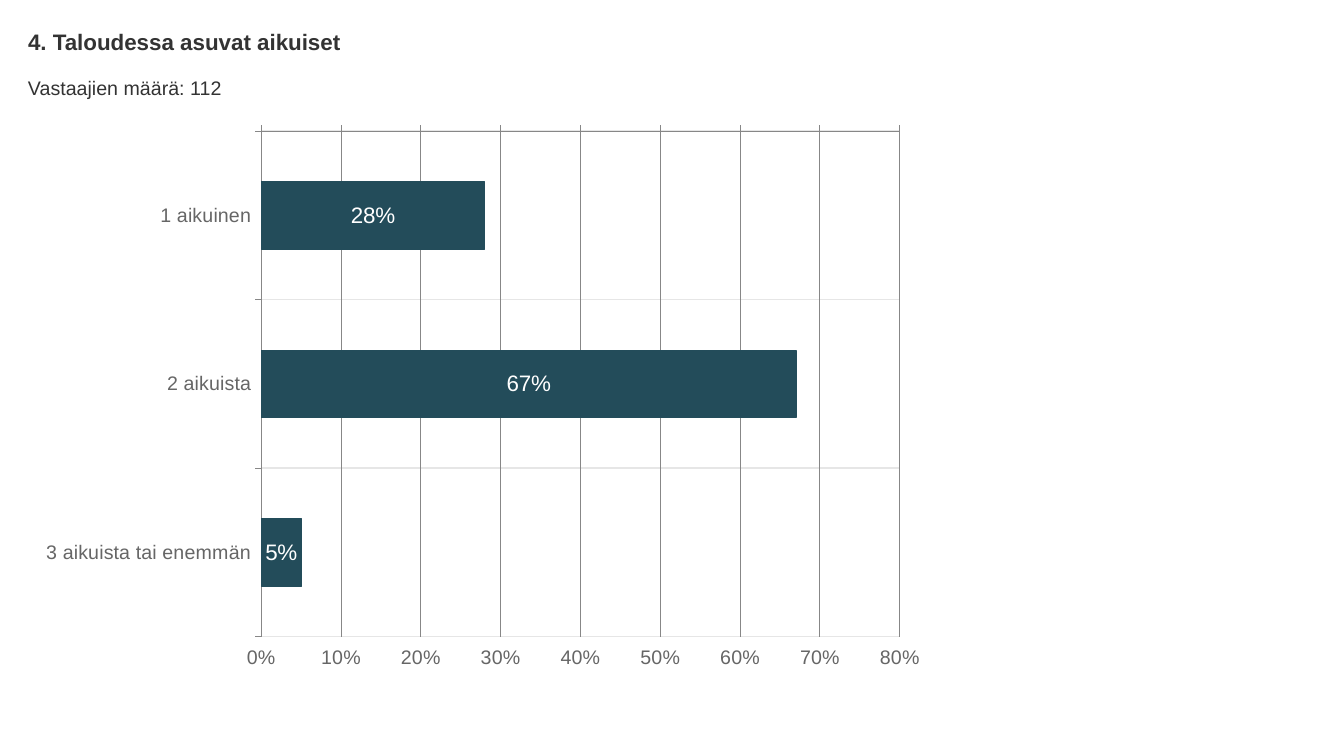
import pptx
import pptx.chart.data
import pptx.dml.color
import pptx.enum.chart
import pptx.enum.text
import pptx.util

Pt = pptx.util.Pt
RGBColor = pptx.dml.color.RGBColor

WHITE = RGBColor(0xFF, 0xFF, 0xFF)
BLACK = RGBColor(0x00, 0x00, 0x00)
HEADING_GREY = RGBColor(0x33, 0x33, 0x33)
LABEL_GREY = RGBColor(0x66, 0x66, 0x66)
AXIS_GREY = RGBColor(0x87, 0x87, 0x87)
DIVIDER_GREY = RGBColor(0xE6, 0xE6, 0xE6)
BAR_TEAL = RGBColor(0x23, 0x4C, 0x5A)

LEFT = Pt(20)
TEXT_WIDTH = Pt(920)


def style_font(font, size, color, name="Arial", bold=False):
    font.name = name
    font.size = Pt(size)
    font.bold = bold
    font.color.rgb = color


def style_line(line, color, width):
    line.color.rgb = color
    line.width = Pt(width)


presentation = pptx.Presentation()
presentation.slide_width = Pt(960)
presentation.slide_height = Pt(540)
slide = presentation.slides.add_slide(presentation.slide_layouts[5])

# Heading and number of respondents
question = slide.shapes.title
respondents = slide.shapes.add_textbox(LEFT, Pt(54), TEXT_WIDTH, Pt(16.5))
question.left, question.top = LEFT, Pt(20)
question.width, question.height = TEXT_WIDTH, Pt(19.5)

for box, text, size, bold in (
    (question, "4. Taloudessa asuvat aikuiset", 16, True),
    (respondents, "Vastaajien määrä: 112", 14, False),
):
    frame = box.text_frame
    frame.margin_left = frame.margin_top = 0
    frame.margin_right = frame.margin_bottom = 0
    frame.word_wrap = True
    frame.auto_size = pptx.enum.text.MSO_AUTO_SIZE.SHAPE_TO_FIT_TEXT
    frame.vertical_anchor = pptx.enum.text.MSO_ANCHOR.TOP
    paragraph = frame.paragraphs[0]
    paragraph.alignment = pptx.enum.text.PP_ALIGN.LEFT
    run = paragraph.add_run()
    run.text = text
    style_font(run.font, size, HEADING_GREY, bold=bold)

# Share of households by number of adults
shares = pptx.chart.data.CategoryChartData(number_format="0%")
shares.categories = ["1 aikuinen", "2 aikuista", "3 aikuista tai enemmän"]
shares.add_series("Series 1", (0.28, 0.67, 0.05))
chart = slide.shapes.add_chart(
    pptx.enum.chart.XL_CHART_TYPE.BAR_CLUSTERED,
    LEFT, Pt(85.7), Pt(650), Pt(400), shares,
).chart
chart.has_title = False
chart.has_legend = False
style_font(chart.font, 14, BLACK, name="Calibri")

plot = chart.plots[0]
plot.gap_width = 150
plot.vary_by_categories = False
bars = plot.series[0]
bars.invert_if_negative = False
bars.format.fill.solid()
bars.format.fill.fore_color.rgb = BAR_TEAL
style_line(bars.format.line, BAR_TEAL, 0.75)

plot.has_data_labels = True
percentages = plot.data_labels
percentages.show_value = True
percentages.number_format = "0%"
percentages.number_format_is_linked = False
percentages.position = pptx.enum.chart.XL_LABEL_POSITION.CENTER
style_font(percentages.font, 16, WHITE)

adults_axis = chart.category_axis
share_axis = chart.value_axis
for axis, grid_color, grid_width in (
    (adults_axis, DIVIDER_GREY, 1),
    (share_axis, AXIS_GREY, 0.75),
):
    axis.major_tick_mark = pptx.enum.chart.XL_TICK_MARK.OUTSIDE
    axis.minor_tick_mark = pptx.enum.chart.XL_TICK_MARK.NONE
    axis.has_major_gridlines = True
    style_line(axis.major_gridlines.format.line, grid_color, grid_width)
    style_line(axis.format.line, AXIS_GREY, 0.75)
    style_font(axis.tick_labels.font, 14, LABEL_GREY)

# The first category is on top, so the percentage labels go to the far side
adults_axis.reverse_order = True
adults_axis.tick_label_position = pptx.enum.chart.XL_TICK_LABEL_POSITION.LOW
share_axis.tick_label_position = pptx.enum.chart.XL_TICK_LABEL_POSITION.HIGH
share_axis.minimum_scale = 0
share_axis.maximum_scale = 0.8
share_axis.major_unit = 0.1
share_axis.tick_labels.number_format = "0%"
share_axis.tick_labels.number_format_is_linked = False

presentation.save("out.pptx")
